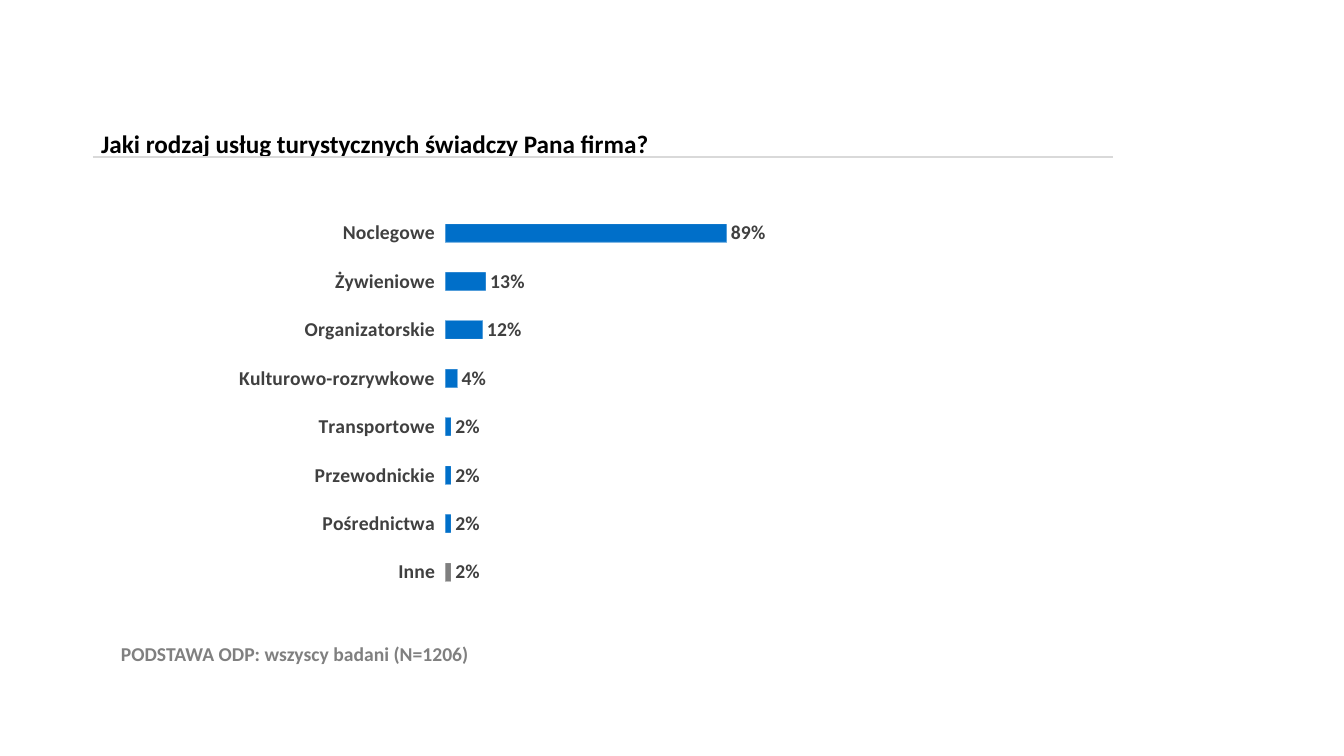
from lxml.etree import SubElement
from pptx import Presentation
from pptx.chart.data import CategoryChartData
from pptx.dml.color import RGBColor
from pptx.enum.chart import XL_CHART_TYPE, XL_LABEL_POSITION, XL_TICK_LABEL_POSITION, XL_TICK_MARK
from pptx.enum.shapes import MSO_CONNECTOR
from pptx.enum.text import MSO_ANCHOR, MSO_AUTO_SIZE, PP_ALIGN
from pptx.oxml import parse_xml
from pptx.oxml.ns import nsdecls, qn
from pptx.util import Pt

SCALE = 914400 / 100.8
COLORS = {"rule": "D9D9D9", "bar": "006FC9", "other": "7F7F7F", "label": "404040",
          "title": "000000", "note": "808080", "edge": "FFFFFF"}
SHARES = {"Noclegowe": 0.89, "Żywieniowe": 0.13, "Organizatorskie": 0.12,
          "Kulturowo-rozrywkowe": 0.04, "Transportowe": 0.02, "Przewodnickie": 0.02,
          "Pośrednictwa": 0.02, "Inne": 0.02}
PLOT = {"x": 0.525, "y": 0.085, "w": 0.385, "h": 0.893}


def px(*sizes):
    """Turn pixel lengths into EMU."""
    return [round(size * SCALE) for size in sizes]


def color(name):
    """Look up a named colour."""
    return RGBColor.from_string(COLORS[name])


class Page:
    """Hold the style and the current slide."""

    def __init__(self, deck, font="Calibri"):
        """Add a slide with a title."""
        self.slide = deck.slides.add_slide(deck.slide_layouts[5])
        self.shapes = self.slide.shapes
        self.face = font

    def style(self, font, size, name, bold=True):
        """Set the look of a font."""
        font.name, font.size, font.bold = self.face, Pt(size), bold
        font.color.rgb = color(name)

    def text(self, para, words, size, name):
        """Add one run to a paragraph."""
        run = para.add_run()
        run.text = words
        self.style(run.font, size, name)

    def title(self, box, words):
        """Fill the title placeholder."""
        shape = self.shapes.title
        shape.left, shape.top, shape.width, shape.height = px(*box)
        frame = shape.text_frame
        frame.vertical_anchor = MSO_ANCHOR.MIDDLE
        frame.auto_size = MSO_AUTO_SIZE.NONE
        para = frame.paragraphs[0]
        para.alignment = PP_ALIGN.LEFT
        para.line_spacing, para.space_after = 1.07, Pt(8)
        self.text(para, words, 18, "title")

    def note(self, box, words):
        """Add a wrapped text box."""
        frame = self.shapes.add_textbox(*px(*box)).text_frame
        frame.word_wrap = True
        frame.auto_size = MSO_AUTO_SIZE.SHAPE_TO_FIT_TEXT
        self.text(frame.paragraphs[0], words, 14, "note")

    def rule(self, left, right, top):
        """Add a thin level line."""
        line = self.shapes.add_connector(MSO_CONNECTOR.STRAIGHT, *px(left, top, right, top))
        line.line.color.rgb, line.line.width = color("rule"), Pt(0.75)
        SubElement(line.element.spPr, qn("a:effectLst"))

    def paint(self, form, name):
        """Fill a bar and give it a thin edge."""
        form.fill.solid()
        form.fill.fore_color.rgb = color(name)
        form.line.color.rgb, form.line.width = color("edge"), Pt(0.75)

    def chart(self, box, shares):
        """Add a bar chart of shares."""
        data = CategoryChartData(number_format="0%")
        data.categories = list(shares)
        data.add_series("Series 1", list(shares.values()))
        chart = self.shapes.add_chart(XL_CHART_TYPE.BAR_CLUSTERED, *px(*box), data).chart
        self.style(chart.font, 10, "title", False)
        chart.has_legend = chart.has_title = False
        plot = chart.plots[0]
        plot.gap_width, plot.vary_by_categories = 155, False
        self.axes(chart)
        self.bars(plot, len(shares) - 1)
        for tint in chart.element.xpath(".//c:ser//a:ln//a:srgbClr"):
            SubElement(tint, qn("a:alpha"), val="50000")
        self.place(chart.element.xpath(".//c:plotArea")[0])

    def axes(self, chart):
        """Format both axes."""
        cats, vals = chart.category_axis, chart.value_axis
        cats.reverse_order = True
        cats.major_tick_mark = XL_TICK_MARK.OUTSIDE
        vals.major_tick_mark = XL_TICK_MARK.NONE
        vals.tick_label_position = XL_TICK_LABEL_POSITION.NONE
        vals.minimum_scale, vals.maximum_scale = 0, 1
        for axis, size in (cats, 14), (vals, 12):
            axis.has_major_gridlines = False
            axis.format.line.fill.background()
            self.style(axis.tick_labels.font, size, "label", axis is cats)

    def bars(self, plot, last):
        """Colour the bars and label them."""
        bars = plot.series[0]
        self.paint(bars.format, "bar")
        self.paint(bars.points[last].format, "other")
        tags = bars.data_labels
        tags.show_value, tags.position = True, XL_LABEL_POSITION.OUTSIDE_END
        tags.number_format, tags.number_format_is_linked = "0%", False
        self.style(tags.font, 14, "label")

    def place(self, area):
        """Fix the inner plot area."""
        for old in area.findall(qn("c:layout")):
            area.remove(old)
        modes = "".join(f'<c:{key}Mode val="edge"/>' for key in "xy")
        sizes = "".join(f'<c:{key} val="{size}"/>' for key, size in PLOT.items())
        area.insert(0, parse_xml(
            f'<c:layout {nsdecls("c")}><c:manualLayout><c:layoutTarget val="inner"/>'
            f'{modes}{sizes}</c:manualLayout></c:layout>'))


def main():
    """Build and save the slide."""
    deck = Presentation()
    deck.slide_width, deck.slide_height = px(1344, 756)
    page = Page(deck)
    page.rule(93, 1113, 157)
    page.chart((13, 172, 823, 434), SHARES)
    page.title((91, 104, 1253, 77), "Jaki rodzaj usług turystycznych świadczy Pana firma?")
    page.note((111, 637, 798, 34), "PODSTAWA ODP: wszyscy badani (N=1206)")
    deck.save("out.pptx")


if __name__ == "__main__":
    main()
